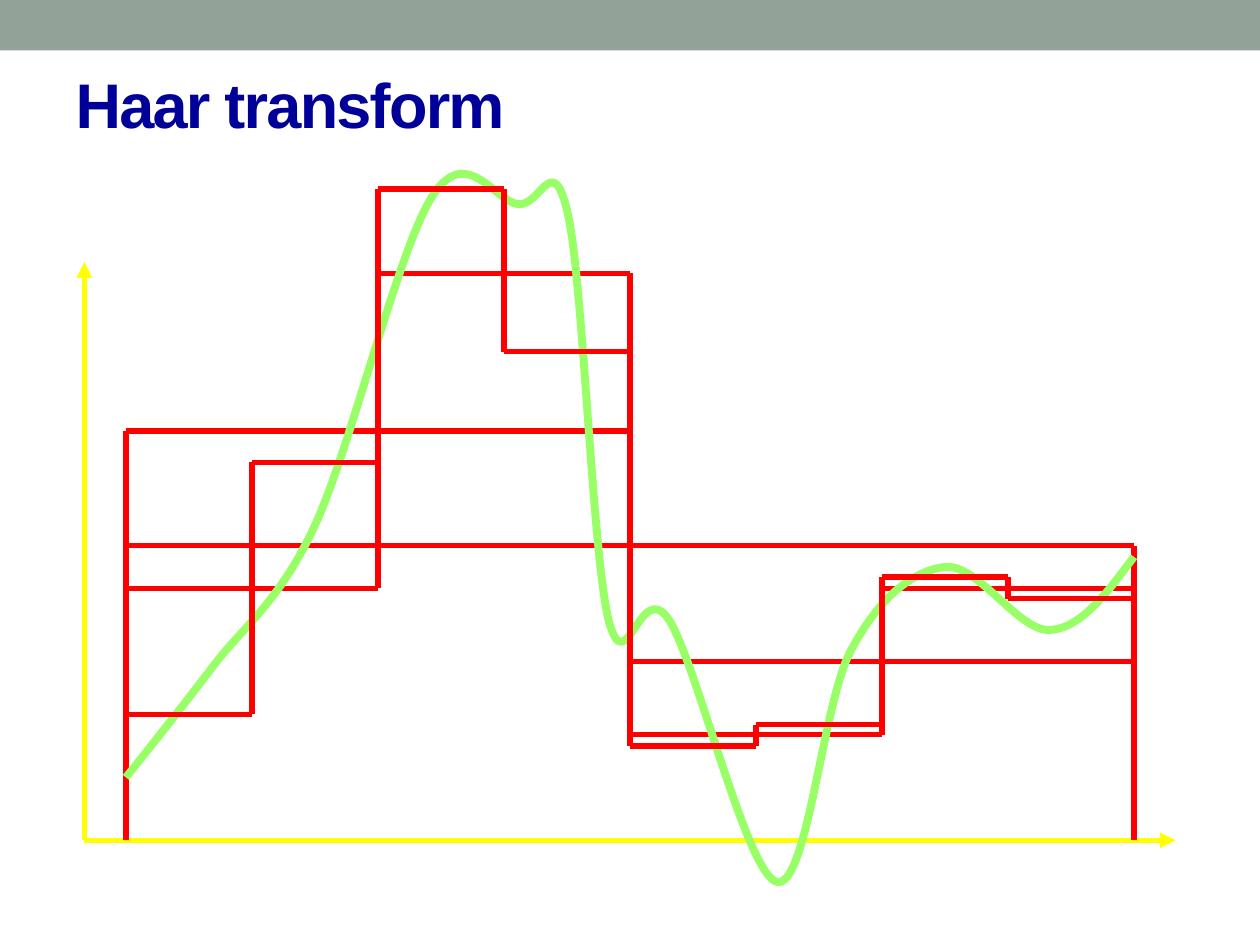
"""Build a slide that shows a signal and its Haar approximations."""
from copy import deepcopy
from dataclasses import dataclass, field
from typing import NamedTuple

from lxml import etree
from pptx import Presentation, util as u
from pptx.dml.color import RGBColor
from pptx.enum import shapes, text
from pptx.oxml.ns import qn

COLORS = {"band": "93A299", "title": "000099", "axis": "FFFF00",
          "step": "FF0000", "signal": "99FF66"}
LEFT, RIGHT, BASELINE = 1, 9, 6.67


class Point(NamedTuple):
    x: float
    y: float


class Curve(NamedTuple):
    control_1: Point
    control_2: Point
    end: Point


class Rise(NamedTuple):
    start: float
    end: float


@dataclass
class Level:
    heights: list[float]
    joins: dict[int, list[Rise]] = field(default_factory=dict)


LEVELS = [
    Level([4.33]),
    Level([3.42, 5.25]),
    Level([4.67, 2.17, 5.83, 4.67]),
    Level([5.67, 3.67, 1.5, 2.79, 5.92, 5.75, 4.58, 4.75],
          {2: [Rise(3.67, 1.5)],
           4: [Rise(2.79, 5.67), Rise(5.67, 5.92)],
           6: [Rise(4.67, 4.58), Rise(4.58, 5.75)]}),
]
SIGNAL_START = Point(1, 6.17)
SIGNAL = [Curve(Point(*a), Point(*b), Point(*c)) for a, b, c in [
    ((1.12, 6.02), (1.44, 5.62), (1.69, 5.29)),
    ((1.94, 4.96), (2.21, 4.79), (2.5, 4.17)),
    ((2.79, 3.54), (3.16, 1.98), (3.43, 1.56)),
    ((3.7, 1.13), (3.93, 1.6), (4.11, 1.62)),
    ((4.29, 1.65), (4.39, 1.16), (4.51, 1.71)),
    ((4.63, 2.26), (4.7, 4.38), (4.83, 4.92)),
    ((4.97, 5.45), (5.08, 4.57), (5.31, 4.92)),
    ((5.53, 5.26), (5.93, 6.96), (6.17, 7)),
    ((6.41, 7.04), (6.53, 5.58), (6.75, 5.17)),
    ((6.97, 4.75), (7.24, 4.53), (7.5, 4.5)),
    ((7.76, 4.47), (8.08, 5.01), (8.33, 5)),
    ((8.58, 4.99), (8.79, 4.7), (9, 4.42)),
]]


def set_values(target, values: dict) -> None:
    """Set each named attribute of the target."""
    for name, value in values.items():
        setattr(target, name, value)


def color(name: str) -> RGBColor:
    """Return the named colour."""
    return RGBColor.from_string(COLORS[name])


def style_line(line, name: str, width: float) -> None:
    """Give a line its colour and width in points."""
    line.color.rgb = color(name)
    line.width = u.Pt(width)


def draw_line(group, start: Point, end: Point, name: str, arrow: bool = False) -> None:
    """Draw a straight line, with an arrowhead at its end if asked."""
    connector = group.shapes.add_connector(
        shapes.MSO_CONNECTOR.STRAIGHT, *map(u.Inches, (*start, *end)))
    style_line(connector.line, name, 3)
    properties = connector._element.spPr
    if arrow:
        etree.SubElement(properties.find(qn("a:ln")), qn("a:tailEnd"), type="triangle")
    etree.SubElement(properties, qn("a:effectLst"))


def draw_level(slide, level: Level, parents: list[float]) -> None:
    """Draw one level of steps, each leaving its parent's height unless joined."""
    group = slide.shapes.add_group_shape()
    width = (RIGHT - LEFT) / len(level.heights)
    for index, height in enumerate(level.heights):
        left = LEFT + index * width
        right = left + width
        parent = parents[index // 2]
        for rise in level.joins.get(index, [Rise(parent, height)]):
            draw_line(group, Point(left, rise.start), Point(left, rise.end), "step")
        draw_line(group, Point(left, height), Point(right, height), "step")
        if index + 1 not in level.joins:
            draw_line(group, Point(right, height), Point(right, parent), "step")


def draw_signal(slide) -> None:
    """Draw the smooth signal as an open outline of cubic curves."""
    builder = slide.shapes.build_freeform(*map(u.Inches, SIGNAL_START))
    builder.add_line_segments(
        [tuple(map(u.Inches, point)) for curve in SIGNAL for point in curve], close=False)
    signal = builder.convert_to_shape()
    outline = next(signal._element.iter(qn("a:path")))
    segments = outline.findall(qn("a:lnTo"))
    for first in range(0, len(segments), 3):
        cubic = etree.SubElement(outline, qn("a:cubicBezTo"))
        for segment in segments[first:first + 3]:
            cubic.append(segment[0])
            outline.remove(segment)
    signal.shadow.inherit = False
    signal.fill.background()
    style_line(signal.line, "signal", 4.5)


def draw_title(slide, words: str) -> None:
    """Fill and format the title placeholder, ending in a line break."""
    title = slide.shapes.title
    set_values(title, {"left": u.Inches(0.5), "top": u.Inches(0.58),
                       "width": u.Inches(9), "height": u.Inches(1.08)})
    set_values(title.text_frame, {
        "auto_size": text.MSO_AUTO_SIZE.NONE, "word_wrap": True,
        "vertical_anchor": text.MSO_ANCHOR.MIDDLE})
    paragraph = title.text_frame.paragraphs[0]
    paragraph.alignment = text.PP_ALIGN.LEFT
    run = paragraph.add_run()
    run.text = words
    set_values(run.font, {"name": "Arial", "size": u.Pt(36), "bold": True})
    run.font.color.rgb = color("title")
    run_format = run._r.get_or_add_rPr()
    run_format.set("spc", "-100")
    paragraph.add_line_break()
    paragraph._p.find(qn("a:br")).append(deepcopy(run_format))
    end_format = etree.SubElement(paragraph._p, qn("a:endParaRPr"), dict(run_format.attrib))
    end_format.extend(deepcopy(list(run_format)))


def main() -> None:
    """Build and save the slide."""
    presentation = Presentation()
    set_values(presentation, {"slide_width": u.Inches(10), "slide_height": u.Inches(7.5)})
    slide = presentation.slides.add_slide(presentation.slide_layouts[5])
    band = slide.shapes.add_shape(
        shapes.MSO_SHAPE.RECTANGLE, 0, 0, u.Inches(10), u.Inches(0.4))
    band.shadow.inherit = False
    band.fill.solid()
    band.fill.fore_color.rgb = color("band")
    band.line.fill.background()
    draw_title(slide, "Haar transform")

    axes = slide.shapes.add_group_shape()
    origin = Point(0.67, BASELINE)
    for tip in (Point(9.33, BASELINE), Point(0.67, 2.08)):
        draw_line(axes, origin, tip, "axis", arrow=True)

    parents = [BASELINE]
    for level in LEVELS:
        if level.joins:
            draw_signal(slide)
        draw_level(slide, level, parents)
        parents = level.heights
    presentation.save("out.pptx")


if __name__ == "__main__":
    main()
